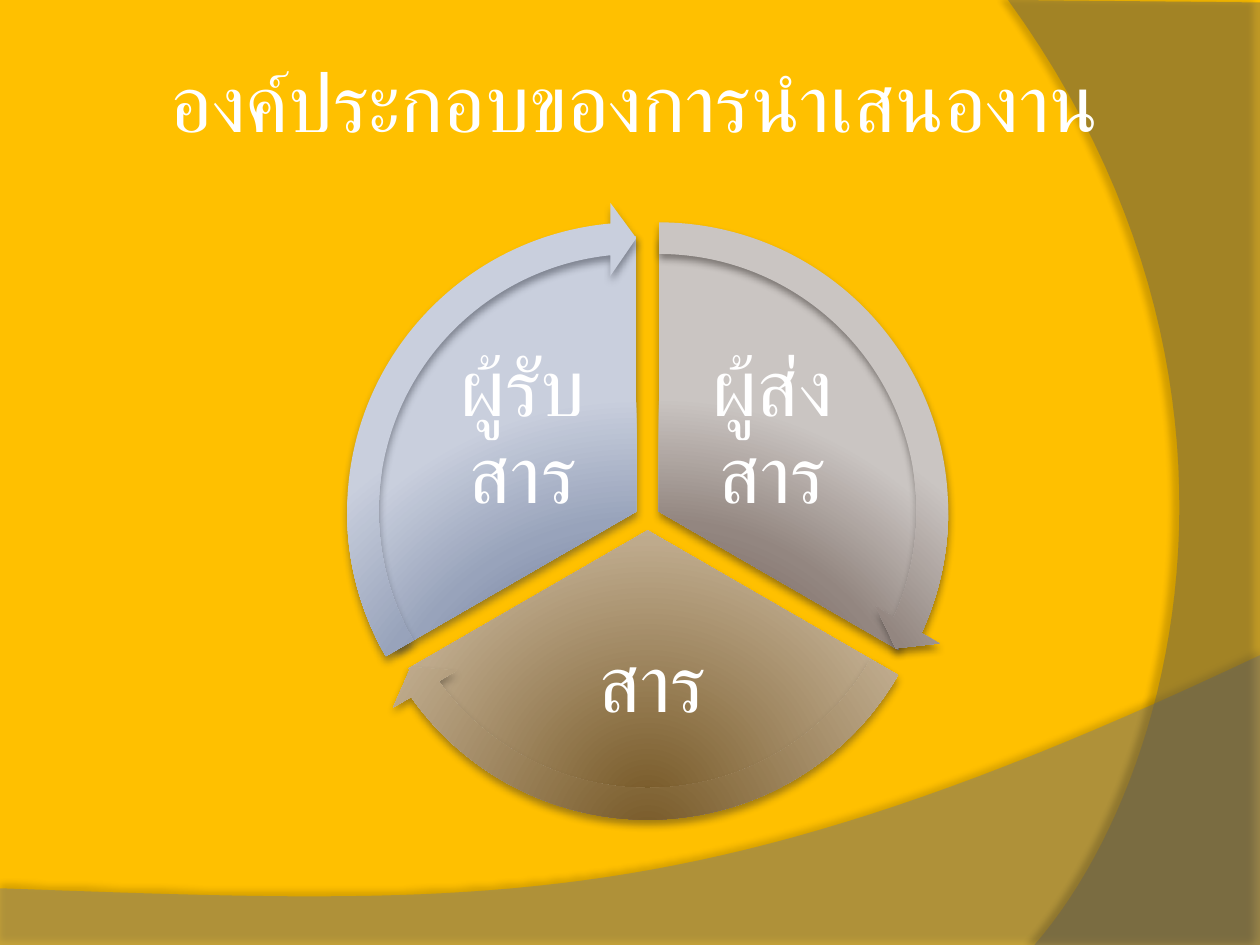
from lxml import etree
from pptx import Presentation
from pptx.dml.color import RGBColor
from pptx.enum.shapes import MSO_SHAPE as SHAPE
from pptx.enum.text import MSO_ANCHOR as ANCHOR, PP_ALIGN as ALIGN
from pptx.oxml.ns import qn
from pptx.util import Inches, Pt

TITLE = "องค์ประกอบของการนำเสนองาน"
SWOOSHES = [
    dict(before=[(0, 7.05), (0, 7.51), (10, 7.51), (10, 5.2)],
         curve=[(5.59, 7.29), (3.91, 7.19), (0, 7.05)],
         color="7F7F7F", alpha=45, shadow=("000000", 35, 4, 3.5, 270)),
    dict(before=[(10, 0.02), (10, 7.5), (8.21, 7.5)],
         curve=[(9.35, 6.19), (10.18, 3), (8, 0)],
         color="5E5E5E", alpha=40, shadow=("000000", 45, 4, 4, 180)),
]
SECTORS = [
    dict(text="ผู้ส่งสาร", box=(5.35, 2.79, 1.56, 1.3), pos=(3.04, 1.87), angles=(162, 18),
         grad=("4C3529", "938680", "CAC5C2"), shadow="28221E"),
    dict(text="สาร", box=(4, 4.87, 2.35, 1.15), pos=(2.95, 2.02), angles=(18, 90),
         grad=("775927", "BEAA8C", "DFD3C3"), shadow="3D3426"),
    dict(text="ผู้รับสาร", box=(3.37, 2.79, 1.56, 1.3), pos=(2.86, 1.87), angles=(90, 162),
         grad=("38496E", "98A3BB", "C9CFDD"), shadow="2D313C"),
]
PIE_SIZE, ARROW_SIZE, ARROW_OFFSET = 4.38, 4.92, 0.27
ARROW_HEAD = 3.275
STOPS = (0, 68, 100)
FONT = dict(name="Arial", size=Pt(46), bold=False)


def rgb(value):
    return RGBColor.from_string(value)


def child(parent, tag, **attrs):
    return etree.SubElement(parent, qn(tag), {k: str(v) for k, v in attrs.items()})


def add_color(parent, value, alpha=100):
    color = child(parent, "a:srgbClr", val=value)
    if alpha < 100:
        child(color, "a:alpha", val=alpha * 1000)


def finish(sp, color, alpha, blur, dist, angle):
    sp.line.fill.background()
    sp.shadow.inherit = False
    effects = sp._element.spPr.find(qn("a:effectLst"))
    shadow = child(effects, "a:outerShdw", blurRad=int(Pt(blur)), dist=int(Pt(dist)),
                   dir=angle * 60000, rotWithShape=0)
    add_color(shadow, color, alpha)


def fill_gradient(sp, colors):
    sp.fill.gradient()
    grad = sp._element.spPr.find(qn("a:gradFill"))
    for old in list(grad):
        grad.remove(old)
    stops = child(grad, "a:gsLst")
    for pos, color in zip(STOPS, colors):
        add_color(child(stops, "a:gs", pos=pos * 1000), color)
    child(child(grad, "a:path", path="circle"), "a:fillToRect",
          l=50000, t=130000, r=50000, b=-30000)


def bezier(points, steps=48):
    for i in range(1, steps + 1):
        t = i / steps
        weights = ((1 - t) ** 3, 3 * t * (1 - t) ** 2, 3 * t * t * (1 - t), t ** 3)
        yield tuple(sum(w * p[axis] for w, p in zip(weights, points)) for axis in (0, 1))


def add_swoosh(s, before, curve, color, alpha, shadow):
    points = before + list(bezier(before[-1:] + curve))
    points = [(Inches(x), Inches(y)) for x, y in points]
    fb = s.shapes.build_freeform(*points[0])
    fb.add_line_segments(points[1:], close=True)
    sp = fb.convert_to_shape()
    sp.fill.solid()
    sp.fill.fore_color.rgb = rgb(color)
    child(sp._element.spPr.find(qn("a:solidFill"))[0], "a:alpha", val=alpha * 1000)
    finish(sp, *shadow)


def add_text(s, text, box, inset):
    tf = s.shapes.add_textbox(*map(Inches, box)).text_frame
    margins = {f"margin_{side}": Inches(inset) for side in ("left", "top", "right", "bottom")}
    for key, value in dict(margins, word_wrap=True, vertical_anchor=ANCHOR.MIDDLE).items():
        setattr(tf, key, value)
    p = tf.paragraphs[0]
    p.alignment = ALIGN.CENTER
    r = p.add_run()
    r.text = text
    for key, value in FONT.items():
        setattr(r.font, key, value)
    r.font.color.rgb = rgb("FFFFFF")
    return p


def add_sector_shape(s, kind, pos, size, adjustments, sector):
    sp = s.shapes.add_shape(kind, *map(Inches, (*pos, size, size)))
    for i, value in enumerate(adjustments):
        sp.adjustments[i] = value
    fill_gradient(sp, sector["grad"])
    finish(sp, sector["shadow"], 48, 4.5, 3, 90)


def main():
    prs = Presentation()
    prs.slide_width, prs.slide_height = Inches(10), Inches(7.5)
    s = prs.slides.add_slide(prs.slide_layouts[6])
    s.background.fill.solid()
    s.background.fill.fore_color.rgb = rgb("FFC000")
    for swoosh in SWOOSHES:
        add_swoosh(s, **swoosh)
    add_text(s, TITLE, (1.14, 0.29, 7.79, 1.01), 0.05)
    for sector in SECTORS:
        add_sector_shape(s, SHAPE.PIE, sector["pos"], PIE_SIZE, sector["angles"], sector)
        p = add_text(s, sector["text"], sector["box"], 0.06)
        p.line_spacing = 0.9
    for sector in SECTORS:
        start, end = sector["angles"]
        pos = [v - ARROW_OFFSET for v in sector["pos"]]
        adjustments = (0.051, ARROW_HEAD, end - ARROW_HEAD, start, 0.059)
        add_sector_shape(s, SHAPE.CIRCULAR_ARROW, pos, ARROW_SIZE, adjustments, sector)
    prs.save("out.pptx")


if __name__ == "__main__":
    main()
